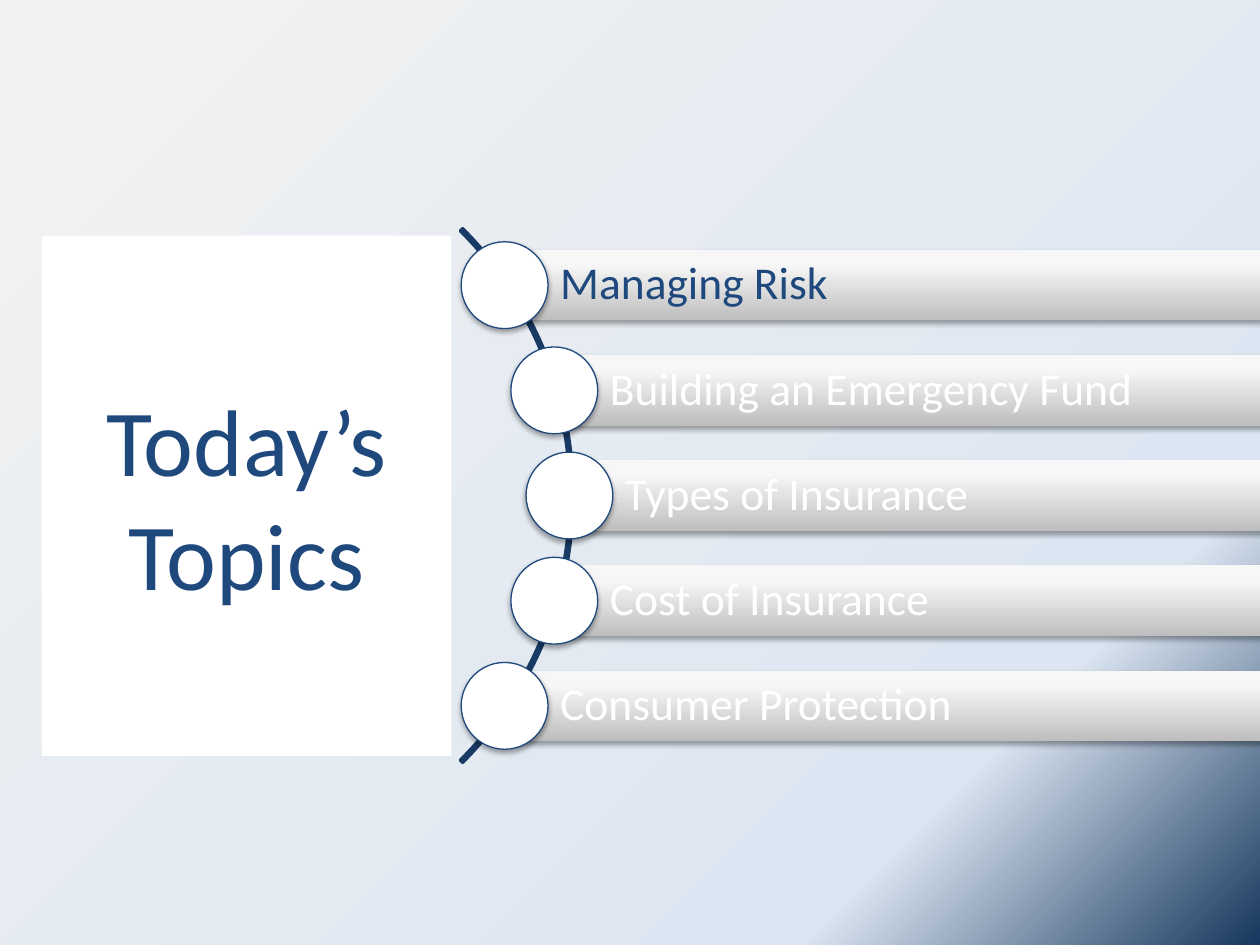
from math import sqrt

from lxml.etree import SubElement
from pptx import Presentation
from pptx.dml.color import RGBColor
from pptx.enum.shapes import MSO_SHAPE as Shape
from pptx.enum.text import MSO_ANCHOR as Anchor, PP_ALIGN as Align
from pptx.oxml.ns import qn
from pptx.util import Cm, Pt

# Content
TITLE = "Today’s Topics"
TOPICS = [
    ("Managing Risk", "1F497D"),
    ("Building an Emergency Fund", "FFFFFF"),
    ("Types of Insurance", "FFFFFF"),
    ("Cost of Insurance", "FFFFFF"),
    ("Consumer Protection", "FFFFFF"),
]

# Style
NAVY, ARC_NAVY, WHITE = "1F497D", "193A64", "FFFFFF"
BACKGROUND_STOPS = [(0, "F2F2F2"), (79, "DCE6F2"), (100, "17375E")]
BAR_STOPS = [(0, "BEBEBE"), (80, "F7F7F7"), (100, "F8F8F8")]

# Layout in centimetres
TITLE_BOX = (0.84, 4.75, 8.26, 10.49)
ARC_X, ARC_Y, ARC_SIZE = 3.95, 9.99, 15.21
TRACK_RADIUS = 7.53  # the dots' centres lie on this circle
ROW_PITCH, BAR_HEIGHT, BAR_RIGHT, DOT_SIZE = 2.12, 1.42, 25.88, 1.75


def color(value):
    return RGBColor.from_string(value)


def set_gradient(fill, owner, stops, clockwise_angle):
    fill.gradient()
    fill.gradient_angle = 360 - clockwise_angle
    stop_list = owner.find(".//" + qn("a:gsLst"))
    for old_stop in list(stop_list):
        stop_list.remove(old_stop)
    for position, value in stops:
        stop = SubElement(stop_list, qn("a:gs"), pos=str(position * 1000))
        SubElement(stop, qn("a:srgbClr"), val=value)


def add_shadow(shape):
    effects = shape.element.spPr.find(qn("a:effectLst"))
    shadow = SubElement(effects, qn("a:outerShdw"), blurRad=str(Pt(3.1)),
                        dist=str(Pt(1.8)), dir="5400000", rotWithShape="0")
    tint = SubElement(shadow, qn("a:srgbClr"), val="000000")
    SubElement(tint, qn("a:alpha"), val="35000")


def add_shape(kind, left, top, width, height, fill=None, line=None, line_width=0.75):
    shape = slide.shapes.add_shape(kind, Cm(left), Cm(top), Cm(width), Cm(height))
    shape.shadow.inherit = False
    if fill:
        shape.fill.solid()
        shape.fill.fore_color.rgb = color(fill)
    else:
        shape.fill.background()
    if line:
        shape.line.color.rgb = color(line)
        shape.line.width = Pt(line_width)
    else:
        shape.line.fill.background()
    return shape


def write(shape, text, size, text_color, align):
    frame = shape.text_frame
    frame.word_wrap = True
    frame.vertical_anchor = Anchor.MIDDLE
    paragraph = frame.paragraphs[0]
    paragraph.alignment = align
    run = paragraph.add_run()
    run.text = text
    run.font.name = "Calibri"
    run.font.size = Pt(size)
    run.font.color.rgb = color(text_color)
    return paragraph


presentation = Presentation()
presentation.slide_width, presentation.slide_height = Cm(25.4), Cm(19.05)
slide = presentation.slides.add_slide(presentation.slide_layouts[6])
set_gradient(slide.background.fill, slide.element, BACKGROUND_STOPS, 45)

# Title panel
panel = add_shape(Shape.RECTANGLE, *TITLE_BOX, fill=WHITE)
write(panel, TITLE, 54, NAVY, Align.CENTER)

# Arc from 315 to 45 degrees
arc = add_shape(Shape.BLOCK_ARC, ARC_X - ARC_SIZE / 2, ARC_Y - ARC_SIZE / 2,
                ARC_SIZE, ARC_SIZE, line=ARC_NAVY, line_width=2)
for index, value in enumerate((189, 27, 0.004)):
    arc.adjustments[index] = value

# Topic bars, each with a dot on the arc
for index, (topic, text_color) in enumerate(TOPICS):
    offset = (index - (len(TOPICS) - 1) / 2) * ROW_PITCH
    x = ARC_X + sqrt(TRACK_RADIUS ** 2 - offset ** 2)
    y = ARC_Y + offset

    bar = add_shape(Shape.RECTANGLE, x, y - BAR_HEIGHT / 2, BAR_RIGHT - x, BAR_HEIGHT)
    set_gradient(bar.fill, bar.element.spPr, BAR_STOPS, 270)
    add_shadow(bar)
    paragraph = write(bar, topic, 26, text_color, Align.LEFT)
    paragraph.line_spacing = 0.9
    frame = bar.text_frame
    frame.margin_left = Cm(1.12)
    frame.margin_top = frame.margin_right = frame.margin_bottom = Cm(0.18)

    dot = add_shape(Shape.OVAL, x - DOT_SIZE / 2, y - DOT_SIZE / 2,
                    DOT_SIZE, DOT_SIZE, fill=WHITE, line=NAVY)
    add_shadow(dot)

presentation.save("out.pptx")
